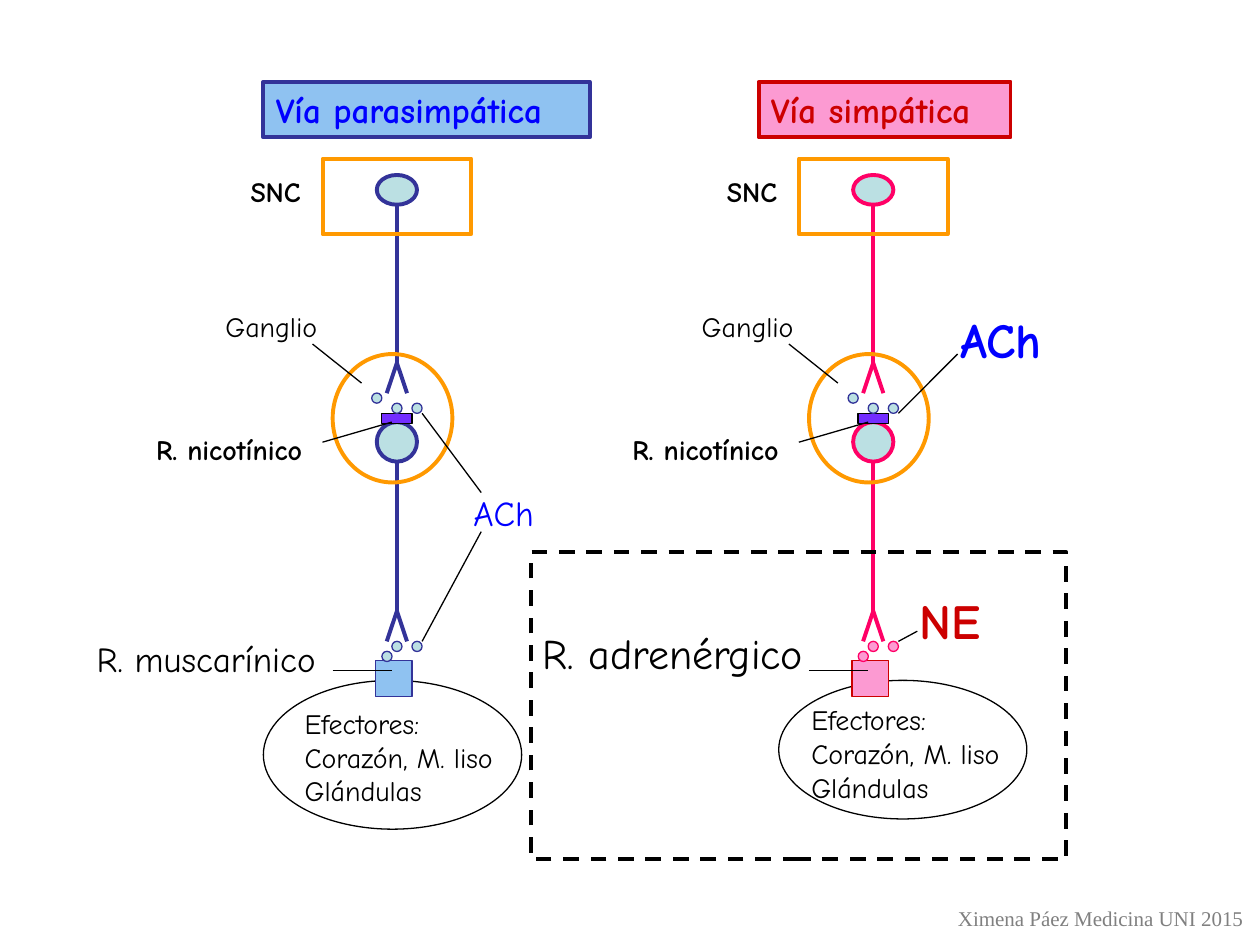
from dataclasses import dataclass

from lxml.etree import SubElement
from pptx import Presentation
from pptx.dml.color import RGBColor
from pptx.enum.dml import MSO_LINE
from pptx.enum.shapes import MSO_CONNECTOR, MSO_SHAPE
from pptx.enum.text import MSO_ANCHOR, PP_ALIGN
from pptx.oxml.ns import qn
from pptx.util import Pt

OVAL, RECT = MSO_SHAPE.OVAL, MSO_SHAPE.RECTANGLE
BLACK, BLUE, NAVY, RED = "000000", "0000FF", "333399", "CC0000"
PINK, ROSE, SKY = "FF0066", "FC9AD2", "8FC2F1"
CELL, ORANGE, VIOLET, GRAY = "BBE0E3", "FF9900", "732DFF", "808080"
THIN, THICK = 0.75, 2.25


def color(value):
    return RGBColor.from_string(value)


@dataclass
class Region:
    """Draws parts relative to the left and top of its box."""
    shapes: object
    left: float
    top: float

    def box(self, x, y, width, height):
        return Pt(self.left + x), Pt(self.top + y), Pt(width), Pt(height)

    def shape(self, kind, bounds, outline, weight=THIN, fill=None):
        part = self.shapes.add_shape(kind, *self.box(*bounds))
        part.shadow.inherit = False
        if fill:
            part.fill.solid()
            part.fill.fore_color.rgb = color(fill)
        else:
            part.fill.background()
        part.line.color.rgb = color(outline)
        part.line.width = Pt(weight)
        return part

    def line(self, x1, y1, x2, y2, ink=BLACK, weight=THIN):
        part = self.shapes.add_connector(
            MSO_CONNECTOR.STRAIGHT, Pt(self.left + x1), Pt(self.top + y1),
            Pt(self.left + x2), Pt(self.top + y2))
        part.line.color.rgb = color(ink)
        part.line.width = Pt(weight)
        SubElement(part._element.spPr, qn("a:effectLst"))

    def label(self, bounds, *lines, **style):
        part = self.shapes.add_textbox(*self.box(*bounds))
        write(part.text_frame, lines, **style)
        return part


def write(frame, lines, size=16, ink=BLACK, bold=False,
          font="Comic Neue", align=PP_ALIGN.LEFT):
    frame.word_wrap = True
    frame.vertical_anchor = MSO_ANCHOR.TOP
    for index, words in enumerate(lines):
        paragraph = frame.paragraphs[0] if index == 0 else frame.add_paragraph()
        paragraph.alignment = align
        run = paragraph.add_run()
        run.text = words
        run.font.name = font
        run.font.size = Pt(size)
        run.font.bold = bold
        run.font.color.rgb = color(ink)


def draw_neuron(region, soma_top, soma_height, axon_end, ink):
    """Cell body, axon and forked terminal, centred on x = 0."""
    region.shape(OVAL, (-11.5, soma_top, 23, soma_height), ink, THICK, CELL)
    region.line(0, soma_top + soma_height, 0, axon_end, ink, THICK)
    for side in (-5.8, 5.8):
        region.line(0, axon_end, side, axon_end + 17.3, ink, THICK)


def draw_transmitter(region, spots, outline, fill):
    for x, y in spots:
        region.shape(OVAL, (x, y, 5.8, 5.8), outline, THIN, fill)


def draw_pathway(region, heading, heading_ink, heading_box, frame_ink,
                 nerve_ink, light, effector, effector_text, release_ink,
                 release_fill):
    """One two-neuron pathway; x = 0 is the nerve axis, y = 0 the heading."""
    # Heading
    title = region.shape(RECT, heading_box, frame_ink, THICK, light)
    write(title.text_frame, [heading], size=20, ink=heading_ink, bold=True)

    # Neurons, ganglion and effector organ
    draw_neuron(region, 53.2, 17, 160.6, nerve_ink)
    draw_neuron(region, 194.4, 22.6, 302.4, nerve_ink)
    region.shape(OVAL, (-36.7, 155.5, 68.4, 73.4), ORANGE, THICK)
    region.shape(OVAL, effector, BLACK)

    # Receptors and transmitters
    region.shape(RECT, (-12.2, 330.5, 20.9, 20.9), frame_ink, THIN, light)
    region.shape(RECT, (-8.6, 189.4, 17.3, 5.8), BLACK, THIN, VIOLET)
    draw_transmitter(region, [(-2.9, 183.6), (8.6, 183.6), (-14.4, 177.8)],
                     NAVY, CELL)
    draw_transmitter(region, [(8.6, 319.7), (-2.9, 319.7), (-8.6, 325.4)],
                     release_ink, release_fill)

    # Central nervous system and shared labels
    region.shape(RECT, (-42.5, 43.9, 85, 43.2), ORANGE, THICK)
    region.label((-90.7, 49.7, 48.2, 26.6), "SNC", bold=True)
    region.label((-105.1, 126.7, 67.7, 26.6), "Ganglio")
    region.label((-144.7, 196.6, 109.4, 26.6), "R. nicotínico", bold=True)
    region.label(effector_text, "Efectores:", "Corazón, M. liso", "Glándulas")
    region.line(-48.2, 149.8, -20.2, 172.1)
    region.line(-42.5, 205.9, -2.9, 194.4)
    region.line(-36.7, 336.2, -2.9, 336.2)


def draw_parasympathetic(region):
    draw_pathway(region, "Vía parasimpática", BLUE, (-76.3, 0, 186.5, 31.7),
                 NAVY, NAVY, SKY, (-76.3, 342, 147.6, 85),
                 (-59.8, 353.5, 141.8, 64.8), NAVY, CELL)
    region.label((-178.6, 313.9, 146.2, 31), "R. muscarínico", size=20)
    region.label((36.7, 230.4, 52.6, 31), "ACh", size=20, ink=BLUE)
    region.line(48.2, 234.7, 14.4, 189.4)
    region.line(48.2, 257, 14.4, 319.7)


def draw_sympathetic(region):
    draw_pathway(region, "Vía simpática", RED, (-65.5, 0, 144, 31.7),
                 RED, PINK, ROSE, (-54, 342, 141.8, 79.2),
                 (-42.5, 351.4, 131, 64.8), PINK, ROSE)
    region.label((-195.8, 308.2, 175.7, 36), "R. adrenérgico", size=24)
    region.label((42.5, 126.7, 73.4, 41), "ACh", size=28, ink=BLUE, bold=True)
    region.line(48.2, 155.5, 14.4, 189.4)
    region.label((19.4, 287.2, 54.7, 41), "NE", size=28, ink=RED, bold=True)
    region.line(25.2, 313.9, 14.4, 319.7)
    # Dashed frame around the adrenergic synapse
    frame = region.shape(RECT, (-195.8, 268.6, 306, 175.7), BLACK, THICK)
    frame.line.dash_style = MSO_LINE.DASH


def draw_footer(region):
    footer = region.label((0, 0, 182, 21.6), "Ximena Páez Medicina UNI 2015",
                          size=12, ink=GRAY, font="Times New Roman",
                          align=PP_ALIGN.CENTER)
    footer.text_frame.margin_left = footer.text_frame.margin_right = 0


def main():
    deck = Presentation()
    deck.slide_width, deck.slide_height = Pt(720), Pt(540)
    shapes = deck.slides.add_slide(deck.slide_layouts[6]).shapes
    draw_parasympathetic(Region(shapes, 226.8, 46.8))
    draw_sympathetic(Region(shapes, 499, 46.8))
    draw_footer(Region(shapes, 538, 514))
    deck.save("out.pptx")


if __name__ == "__main__":
    main()
